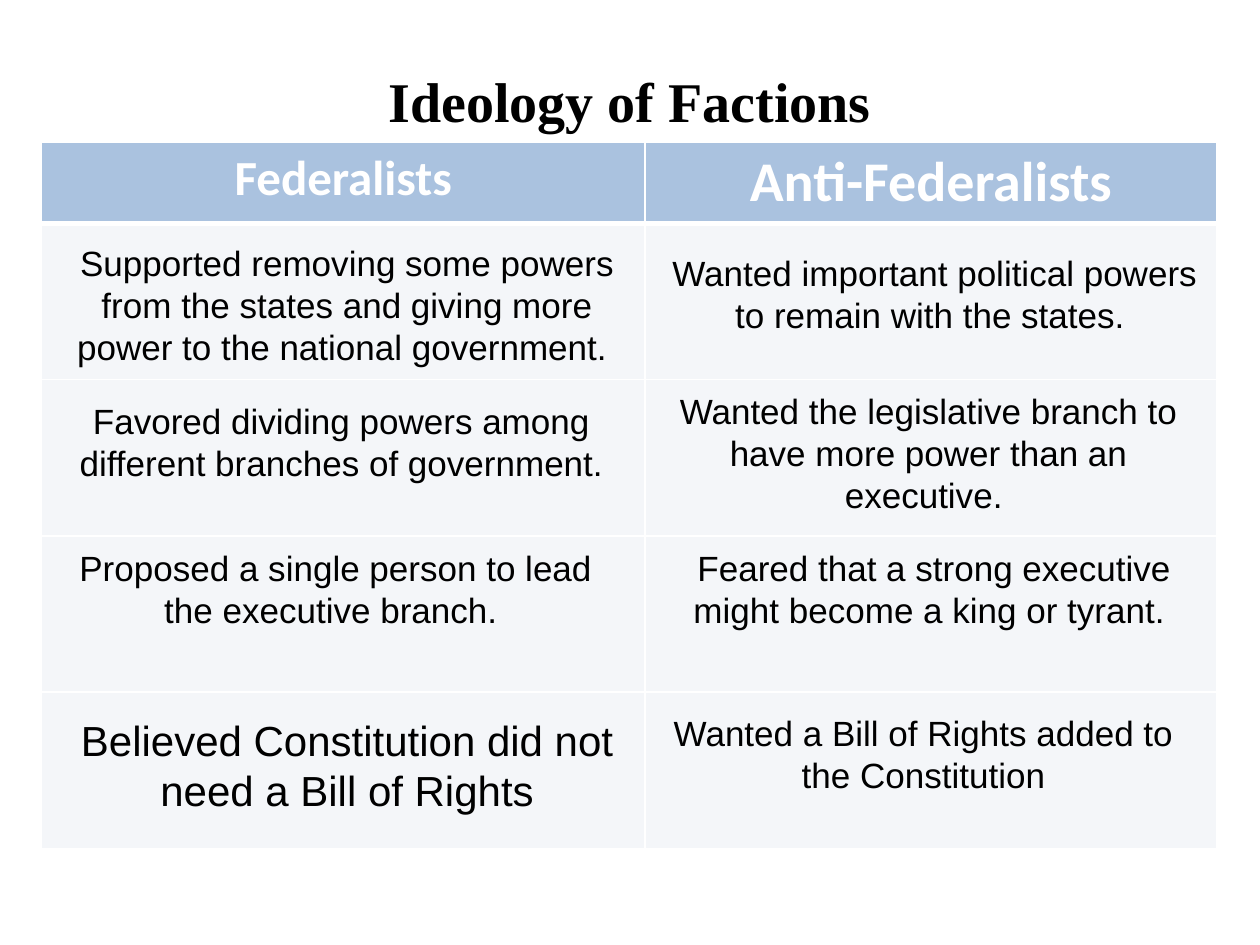
from dataclasses import dataclass

from lxml.etree import SubElement
from pptx import Presentation
from pptx.dml.color import RGBColor
from pptx.enum.text import MSO_ANCHOR, MSO_AUTO_SIZE, PP_ALIGN
from pptx.oxml.ns import qn
from pptx.util import Inches, Pt


@dataclass(frozen=True)
class Theme:
    text: str = "000000"
    white: str = "FFFFFF"
    header_fill: str = "4F81BD"
    header_alpha: int = 48
    body_fill: str = "E9EDF4"
    body_alpha: int = 47
    title_font: str = "Times New Roman"
    header_font: str = "Calibri"
    body_font: str = "Arial"
    title_size: int = 32
    body_size: int = 20
    large_size: int = 24
    thin: int = 1
    thick: int = 3


THEME = Theme()
HEADERS = [("Federalists", 28), ("Anti-Federalists", 32)]
COLUMN_WIDTHS = [4.79, 4.54]
HEADER_HEIGHT = 0.63
ROW_HEIGHT = 1.24
ROW_COUNT = 4

NOTES = [
    (0.09, 0.74, 4.67, 1.1, THEME.body_size,
     "Supported removing some powers from the states and giving more power to the national government. "),
    (4.84, 0.82, 4.5, 0.77, THEME.body_size,
     "Wanted important political powers to remain with the states. "),
    (0.17, 1.99, 4.42, 0.77, THEME.body_size,
     "Favored dividing powers among different branches of government. "),
    (4.75, 1.91, 4.58, 1.1, THEME.body_size,
     "Wanted the legislative branch to have more power than an executive. "),
    (0.17, 3.16, 4.33, 0.77, THEME.body_size,
     "Proposed a single person to lead the executive branch. "),
    (4.92, 3.16, 4.33, 0.77, THEME.body_size,
     "Feared that a strong executive might become a king or tyrant. "),
    (0.09, 4.49, 4.67, 0.91, THEME.large_size,
     "Believed Constitution did not need a Bill of Rights"),
    (4.75, 4.47, 4.5, 0.77, THEME.body_size,
     "Wanted a Bill of Rights added to the Constitution"),
]


def format_paragraph(p, name, size, color, bold=False):
    p.alignment = PP_ALIGN.CENTER
    p.font.name = name
    p.font.size = Pt(size)
    p.font.bold = bold
    p.font.color.rgb = RGBColor.from_string(color)


def style_cell(cell, fill, alpha, top, bottom):
    tc_pr = cell._tc.get_or_add_tcPr()
    borders = {"lnL": THEME.thin, "lnR": THEME.thin, "lnT": top, "lnB": bottom}
    for tag, width in borders.items():
        ln = SubElement(tc_pr, qn(f"a:{tag}"), w=str(Pt(width)))
        solid = SubElement(ln, qn("a:solidFill"))
        SubElement(solid, qn("a:srgbClr"), val=THEME.white)
    cell.fill.solid()
    cell.fill.fore_color.rgb = RGBColor.from_string(fill)
    color = tc_pr.find(qn("a:solidFill")).find(qn("a:srgbClr"))
    SubElement(color, qn("a:alpha"), val=str(alpha * 1000))


def add_title(slide, left, top, width, height):
    title = slide.shapes.title
    title.left, title.top = Inches(left), Inches(top)
    title.width, title.height = Inches(width), Inches(height)
    tf = title.text_frame
    tf.text = "Ideology of Factions"
    tf.vertical_anchor = MSO_ANCHOR.MIDDLE
    format_paragraph(tf.paragraphs[0], THEME.title_font, THEME.title_size, THEME.text, True)


def add_grid(slide, left, top):
    height = HEADER_HEIGHT + ROW_COUNT * ROW_HEIGHT
    table = slide.shapes.add_table(
        ROW_COUNT + 1, len(HEADERS), Inches(left), Inches(top),
        Inches(sum(COLUMN_WIDTHS)), Inches(height)).table
    table.horz_banding = False
    for column, width in zip(table.columns, COLUMN_WIDTHS):
        column.width = Inches(width)
    for i, row in enumerate(table.rows):
        row.height = Inches(ROW_HEIGHT if i else HEADER_HEIGHT)
        for cell, (label, size) in zip(row.cells, HEADERS):
            if i == 0:
                style_cell(cell, THEME.header_fill, THEME.header_alpha, THEME.thin, THEME.thick)
                cell.text = label
                format_paragraph(cell.text_frame.paragraphs[0], THEME.header_font, size, THEME.white, True)
            else:
                upper = THEME.thick if i == 1 else THEME.thin
                style_cell(cell, THEME.body_fill, THEME.body_alpha, upper, THEME.thin)


def add_notes(slide, left, top):
    for x, y, width, height, size, text in NOTES:
        box = slide.shapes.add_textbox(
            Inches(left + x), Inches(top + y), Inches(width), Inches(height))
        tf = box.text_frame
        tf.word_wrap = True
        tf.auto_size = MSO_AUTO_SIZE.SHAPE_TO_FIT_TEXT
        tf.text = text
        format_paragraph(tf.paragraphs[0], THEME.body_font, size, THEME.text)


def main():
    prs = Presentation()
    prs.slide_width, prs.slide_height = Inches(10), Inches(7.5)
    slide = prs.slides.add_slide(prs.slide_layouts.get_by_name("Title Only"))
    add_title(slide, 0.75, 0.46, 8.5, 0.67)
    add_grid(slide, 0.33, 1.13)
    add_notes(slide, 0.33, 1.13)
    prs.save("out.pptx")


if __name__ == "__main__":
    main()
